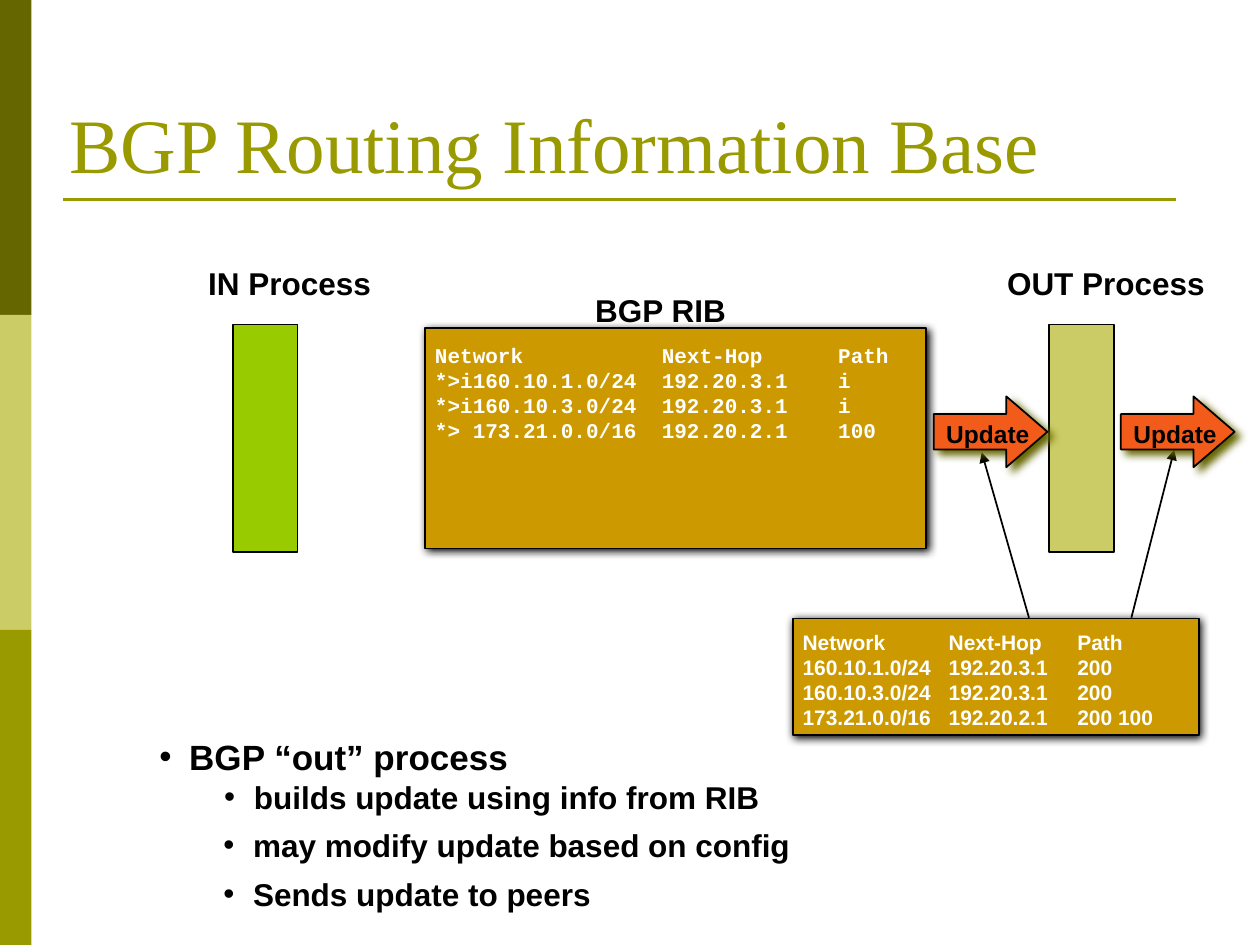
from lxml import etree
from pptx import Presentation
from pptx.dml.color import RGBColor
from pptx.enum.shapes import MSO_CONNECTOR, MSO_SHAPE
from pptx.enum.text import MSO_ANCHOR, MSO_AUTO_SIZE, PP_ALIGN
from pptx.oxml.ns import qn
from pptx.util import Pt

BLACK = RGBColor(0x00, 0x00, 0x00)
WHITE = RGBColor(0xFF, 0xFF, 0xFF)
DARK_OLIVE = RGBColor(0x66, 0x66, 0x00)
OLIVE = RGBColor(0x99, 0x99, 0x00)
PALE_OLIVE = RGBColor(0xCC, 0xCC, 0x66)
GREEN = RGBColor(0x99, 0xCC, 0x00)
GOLD = RGBColor(0xCC, 0x99, 0x00)
ORANGE = RGBColor(0xF3, 0x5B, 0x1B)

LABEL = {"name": "Arial", "size": Pt(18), "bold": True}
HEADING = {**LABEL, "size": Pt(20)}
UPDATE = {**LABEL, "size": Pt(14)}
ROUTES = {**LABEL, "size": Pt(12)}
RIB_ROUTES = {**ROUTES, "name": "Courier New"}
TITLE = {"name": "Times New Roman", "size": Pt(44), "bold": False}

RIB_ROWS = [
    ("Network", "Next-Hop", "Path"),
    ("*>i160.10.1.0/24", "192.20.3.1", "i"),
    ("*>i160.10.3.0/24", "192.20.3.1", "i"),
    ("*> 173.21.0.0/16", "192.20.2.1", "100"),
]
UPDATE_ROWS = [
    ("Network", "Next-Hop", "Path"),
    ("160.10.1.0/24", "192.20.3.1", "200"),
    ("160.10.3.0/24", "192.20.3.1", "200"),
    ("173.21.0.0/16", "192.20.2.1", "200 100"),
]
# Text, format, left margin, space before
OUT_STEPS = [
    ("BGP “out” process", HEADING, 17, 0),
    ("builds update using info from RIB", LABEL, 54, 0),
    ("may modify update based on config", LABEL, 53.5, 5.6),
    ("Sends update to peers", LABEL, 53.5, 6.4),
]


def points(*lengths):
    return [Pt(length) for length in lengths]


def set_format(target, values):
    for attribute, value in values.items():
        setattr(target, attribute, value)


def add_child(parent, tag, **attributes):
    child = etree.SubElement(parent, qn(tag))
    for name, value in attributes.items():
        child.set(name, str(value))
    return child


def add_block(slide, box, fill, outline=BLACK, preset=MSO_SHAPE.RECTANGLE):
    block = slide.shapes.add_shape(preset, *points(*box))
    block.shadow.inherit = False
    block.fill.solid()
    block.fill.fore_color.rgb = fill
    if outline is None:
        block.line.fill.background()
    else:
        block.line.color.rgb = outline
        block.line.width = Pt(1)
    return block


def add_shadow(block, color, distance):
    effects = block._element.spPr.find(qn("a:effectLst"))
    shadow = add_child(effects, "a:outerShdw", blurRad=Pt(5), dist=Pt(distance),
                       dir=45 * 60000, algn="ctr", rotWithShape=0)
    add_child(shadow, "a:srgbClr", val=color)


def add_line(slide, start, end, color, width, arrowhead=False):
    line = slide.shapes.add_connector(MSO_CONNECTOR.STRAIGHT, *points(*start, *end))
    line.line.color.rgb = color
    line.line.width = Pt(width)
    properties = line._element.spPr
    if arrowhead:
        add_child(properties.find(qn("a:ln")), "a:tailEnd", type="triangle")
    add_child(properties, "a:effectLst")


def add_text(slide, box, lines, font, color=BLACK, align=PP_ALIGN.LEFT, wrap=False, inset=3.6):
    frame = slide.shapes.add_textbox(*points(*box)).text_frame
    set_format(frame, {"word_wrap": wrap, "text": "\n".join(lines)})
    set_format(frame, {f"margin_{side}": Pt(inset)
                       for side in ("left", "top", "right", "bottom")})
    for paragraph in frame.paragraphs:
        paragraph.alignment = align
        set_format(paragraph.runs[0].font, font)
        paragraph.runs[0].font.color.rgb = color
    return frame


def add_side_band(slide, left, top, width, height):
    part = height / 3
    for row, color in enumerate((DARK_OLIVE, PALE_OLIVE, OLIVE)):
        add_block(slide, (left, top + row * part, width, part), color, outline=None)


def add_title(slide, left, top, width, height):
    title = slide.shapes.title
    set_format(title, dict(zip(("left", "top", "width", "height"),
                               points(left, top, width, height))))
    frame = title.text_frame
    set_format(frame, {"text": "BGP Routing Information Base", "word_wrap": True,
                       "vertical_anchor": MSO_ANCHOR.BOTTOM, "auto_size": MSO_AUTO_SIZE.NONE})
    set_format(frame, {f"margin_{side}": Pt(3.6)
                       for side in ("left", "top", "right", "bottom")})
    paragraph = frame.paragraphs[0]
    paragraph.alignment = PP_ALIGN.LEFT
    set_format(paragraph.runs[0].font, TITLE)
    paragraph.runs[0].font.color.rgb = OLIVE
    rule = top + height + 2.5
    add_line(slide, (left, rule), (left + 636, rule), OLIVE, 1.5)


def add_process(slide, left, top, width, height, name, color, label_center):
    add_block(slide, (left, top, width, height), color)
    add_text(slide, (label_center - 61, top - 38, 122, 28), [name], LABEL,
             align=PP_ALIGN.CENTER)


def add_route_panel(slide, left, top, width, height, rows, font, tab_stops, text_top):
    panel = add_block(slide, (left, top, width, height), GOLD)
    add_shadow(panel, BLACK, 1.4)
    frame = add_text(slide, (left + 2, top + text_top, width - 4, 65),
                     ["\t".join(row) for row in rows], font, WHITE)
    for paragraph in frame.paragraphs:
        tabs = add_child(paragraph._p.get_or_add_pPr(), "a:tabLst")
        for stop in tab_stops:
            add_child(tabs, "a:tab", pos=Pt(stop), algn="l")


def add_update_arrow(slide, left, top, width, height):
    arrow = add_block(slide, (left, top, width, height), ORANGE, preset=MSO_SHAPE.RIGHT_ARROW)
    arrow.adjustments[0] = 0.5
    arrow.adjustments[1] = 0.58
    add_shadow(arrow, DARK_OLIVE, 4.2)
    add_text(slide, (left + 3, top + 9.5, 56, 23), ["Update"], UPDATE, align=PP_ALIGN.CENTER)


def add_out_steps(slide, left, top, width, height):
    frame = add_text(slide, (left, top, width, height), [step[0] for step in OUT_STEPS],
                     LABEL, wrap=True)
    for paragraph, (_, font, margin, gap) in zip(frame.paragraphs, OUT_STEPS):
        set_format(paragraph.runs[0].font, font)
        set_format(paragraph, {"space_before": Pt(gap), "level": int(font is LABEL)})
        properties = paragraph._p.get_or_add_pPr()
        properties.set("marL", str(Pt(margin)))
        properties.set("indent", str(Pt(-17)))
        add_child(add_child(properties, "a:buClr"), "a:srgbClr", val=BLACK)
        add_child(properties, "a:buFont", typeface="Arial")
        add_child(properties, "a:buChar", char="•")


def main():
    deck = Presentation()
    deck.slide_width, deck.slide_height = points(720, 540)
    slide = deck.slides.add_slide(deck.slide_layouts[5])

    # Frame and title
    add_side_band(slide, 0, 0, 18, 540)
    add_title(slide, 36, -1.5, 648, 113)

    # Processes on either side of the routing table
    add_process(slide, 133, 185.5, 37, 130, "IN Process", GREEN, label_center=165.5)
    add_process(slide, 599.5, 185.5, 37, 130, "OUT Process", PALE_OLIVE, label_center=632)

    # Routing table
    add_text(slide, (336, 163, 83, 28), ["BGP RIB"], LABEL, align=PP_ALIGN.CENTER)
    add_route_panel(slide, 243, 187.5, 286, 126, RIB_ROWS, RIB_ROUTES, (129.6, 230.4), 4.5)

    # Updates and their contents
    add_route_panel(slide, 453, 353.5, 232, 66.5, UPDATE_ROWS, ROUTES, (83.5, 157), 2.5)
    for arrow_left, pointer_start, pointer_tip in (
        (533.5, (588, 353), (561, 258.5)),
        (640.5, (646.5, 353), (671, 257)),
    ):
        add_line(slide, pointer_start, pointer_tip, BLACK, 1, arrowhead=True)
        add_update_arrow(slide, arrow_left, 226.5, 65, 40.5)

    # What the out process does
    add_out_steps(slide, 87.5, 417, 370, 106)

    deck.save("out.pptx")


if __name__ == "__main__":
    main()
